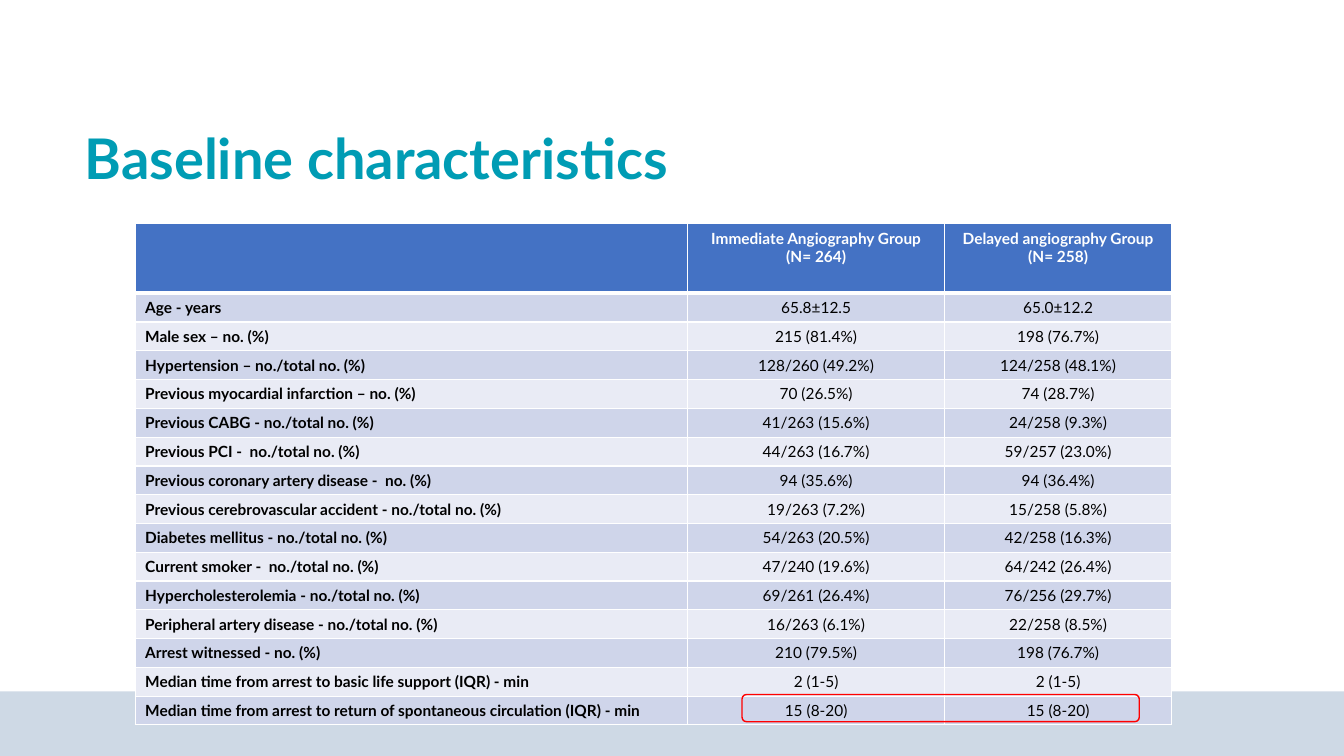
from lxml import etree
from pptx import Presentation
from pptx.dml.color import RGBColor
from pptx.enum import shapes, text
from pptx.oxml import ns
from pptx.util import Inches, Pt

FONT = "Lato"
WHITE = RGBColor(0xFF, 0xFF, 0xFF)
BLACK = RGBColor(0, 0, 0)
TEAL = RGBColor(0x00, 0x9C, 0xB4)
MIST = RGBColor(0xCE, 0xD9, 0xE5)
BLUE = RGBColor(0x44, 0x72, 0xC4)
BANDS = (RGBColor(0xCF, 0xD5, 0xEA), RGBColor(0xE9, 0xEB, 0xF5))
RED = RGBColor(0xFF, 0, 0)

WIDTHS = (5.48, 2.55, 2.25)
HEADS = (
    (),
    ("Immediate Angiography Group", "(N= 264)"),
    ("Delayed angiography Group", "(N= 258)"),
)
ROWS = (
    ("Age - years", "65.8±12.5", "65.0±12.2"),
    ("Male sex – no. (%)", "215 (81.4%)", "198 (76.7%)"),
    ("Hypertension – no./total no. (%)", "128/260 (49.2%)", "124/258 (48.1%)"),
    ("Previous myocardial infarction – no. (%)", "70 (26.5%)", "74 (28.7%)"),
    ("Previous CABG - no./total no. (%)", "41/263 (15.6%)", "24/258 (9.3%)"),
    ("Previous PCI -  no./total no. (%)", "44/263 (16.7%)", "59/257 (23.0%)"),
    ("Previous coronary artery disease -  no. (%)", "94 (35.6%)", "94 (36.4%)"),
    ("Previous cerebrovascular accident - no./total no. (%)", "19/263 (7.2%)", "15/258 (5.8%)"),
    ("Diabetes mellitus - no./total no. (%)", "54/263 (20.5%)", "42/258 (16.3%)"),
    ("Current smoker -  no./total no. (%)", "47/240 (19.6%)", "64/242 (26.4%)"),
    ("Hypercholesterolemia - no./total no. (%)", "69/261 (26.4%)", "76/256 (29.7%)"),
    ("Peripheral artery disease - no./total no. (%)", "16/263 (6.1%)", "22/258 (8.5%)"),
    ("Arrest witnessed - no. (%)", "210 (79.5%)", "198 (76.7%)"),
    ("Median time from arrest to basic life support (IQR) - min", "2 (1-5)", "2 (1-5)"),
    ("Median time from arrest to return of spontaneous circulation (IQR) - min",
     "15 (8-20)", "15 (8-20)"),
)


def add_run(para, words, size, color, bold):
    run = para.add_run()
    run.text = words
    font = run.font
    font.name, font.size, font.bold = FONT, Pt(size), bold
    font.color.rgb = color


def add_title(slide, words):
    title = slide.shapes.title
    title.left, title.top = Inches(0.74), Inches(1.2)
    title.width, title.height = Inches(11.77), Inches(0.81)
    frame = title.text_frame
    frame.word_wrap = True
    frame.vertical_anchor = text.MSO_ANCHOR.MIDDLE
    para = frame.paragraphs[0]
    para.alignment = text.PP_ALIGN.LEFT
    para.line_spacing = 0.9
    add_run(para, words, 40, TEAL, True)


def add_box(slide, kind, box, fill=None, line=None):
    shape = slide.shapes.add_shape(kind, *map(Inches, box))
    shape.shadow.inherit = False
    if fill is None:
        shape.fill.background()
    else:
        shape.fill.solid()
        shape.fill.fore_color.rgb = fill
    if line is None:
        shape.line.fill.background()
    else:
        shape.line.color.rgb = line
        shape.line.width = Pt(1)


def set_edges(cell, base):
    """Draw white cell borders, with the bottom one base points wide."""
    props = cell._tc.get_or_add_tcPr()
    sides = (("lnL", 1), ("lnR", 1), ("lnT", 1), ("lnB", base))
    for spot, (side, width) in enumerate(sides):
        edge = etree.Element(ns.qn("a:" + side), w=str(Pt(width)))
        fill = etree.SubElement(edge, ns.qn("a:solidFill"))
        etree.SubElement(fill, ns.qn("a:srgbClr"), val=str(WHITE))
        props.insert(spot, edge)


def fill_cell(cell, lines, fill, color, bold, align, base=1):
    cell.fill.solid()
    cell.fill.fore_color.rgb = fill
    set_edges(cell, base)
    frame = cell.text_frame
    for num, words in enumerate(lines):
        para = frame.add_paragraph() if num else frame.paragraphs[0]
        para.alignment = align
        add_run(para, words, 11, color, bold)


def add_grid(slide):
    height = 0.69 + 0.28 * len(ROWS)
    frame = slide.shapes.add_table(
        len(ROWS) + 1, len(WIDTHS), Inches(1.34), Inches(2.22),
        Inches(sum(WIDTHS)), Inches(height))
    table = frame.table
    for col, width in zip(table.columns, WIDTHS):
        col.width = Inches(width)
    for row in table.rows:
        row.height = Inches(0.28)
    table.rows[0].height = Inches(0.69)
    left, center = text.PP_ALIGN.LEFT, text.PP_ALIGN.CENTER
    for col, lines in enumerate(HEADS):
        fill_cell(table.cell(0, col), lines, BLUE, WHITE, True, center, 3)
    for num, row in enumerate(ROWS):
        for col, words in enumerate(row):
            label = col == 0
            fill_cell(table.cell(num + 1, col), [words], BANDS[num % 2], BLACK,
                      label, left if label else center)


def main():
    deck = Presentation()
    deck.slide_width, deck.slide_height = Inches(13.33), Inches(7.5)
    slide = deck.slides.add_slide(deck.slide_layouts[5])
    kinds = shapes.MSO_SHAPE
    add_box(slide, kinds.RECTANGLE, (0, 6.86, 13.33, 0.64), fill=MIST)
    add_title(slide, "Baseline characteristics")
    add_grid(slide)
    add_box(slide, kinds.ROUNDED_RECTANGLE, (7.36, 6.89, 3.94, 0.27), line=RED)
    deck.save("out.pptx")


if __name__ == "__main__":
    main()
